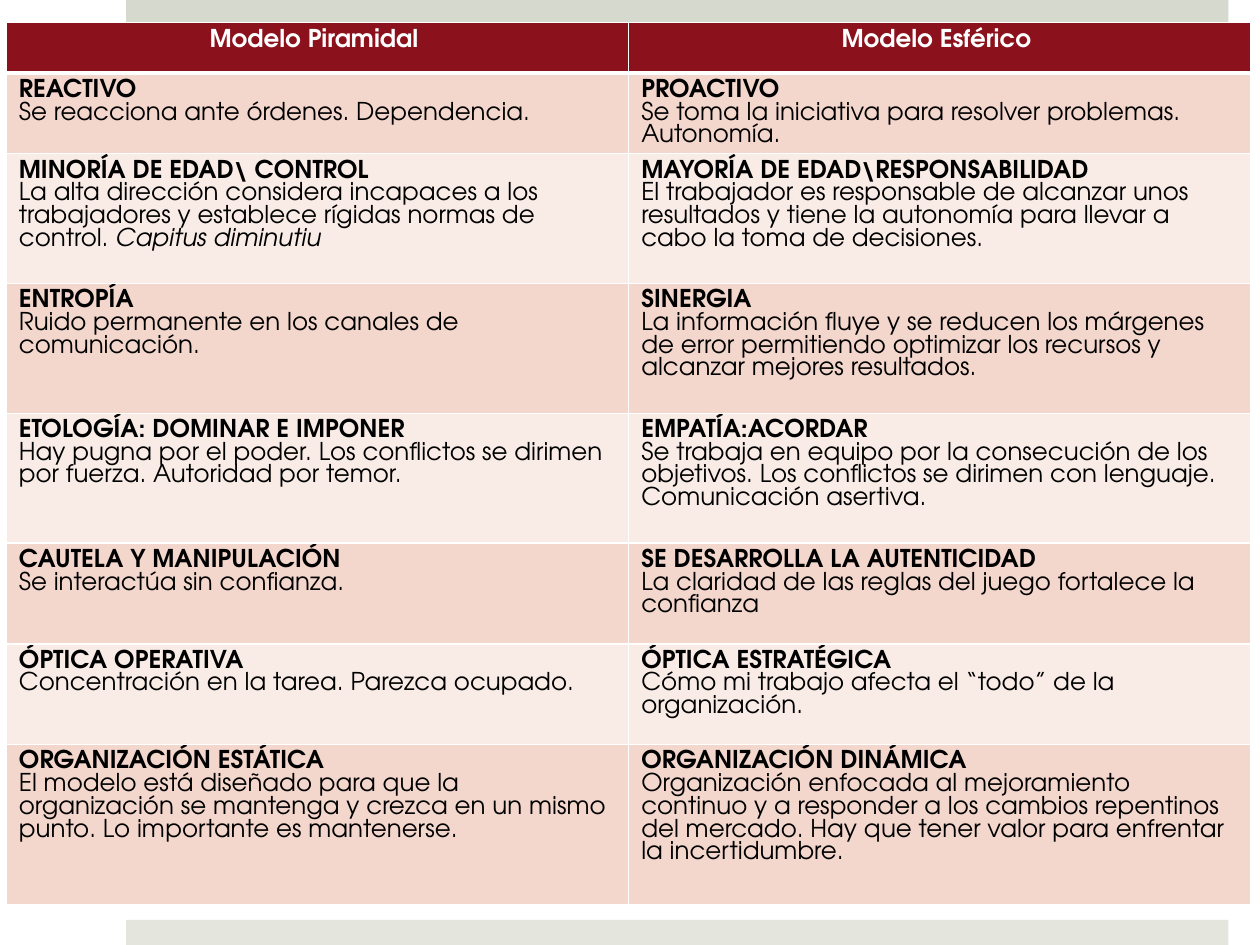
from pptx import Presentation
from pptx.dml.color import RGBColor
from pptx.enum.shapes import MSO_SHAPE
from pptx.enum.text import PP_ALIGN
from pptx.util import Inches, Pt
from lxml.etree import fromstring

FONT = "TeX Gyre Adventor"
NS = "http://schemas.openxmlformats.org/drawingml/2006/main"


def paint(fill, color):
    fill.solid()
    fill.fore_color.rgb = RGBColor.from_string(color)


def edge(cell, side, width):
    line = fromstring(
        f'<a:{side} xmlns:a="{NS}" w="{Pt(width)}"><a:solidFill>'
        f'<a:srgbClr val="FFFFFF"/></a:solidFill></a:{side}>')
    props = cell._tc.get_or_add_tcPr()
    props.insert(["lnL", "lnR", "lnT", "lnB"].index(side), line)


heads = ["Modelo Piramidal ", "Modelo Esférico "]
rows = [
    (0.63,
     ("REACTIVO", "Se reacciona ante órdenes. Dependencia."),
     ("PROACTIVO", "Se toma la iniciativa para resolver problemas. Autonomía.")),
    (1.03,
     ("MINORÍA DE EDAD\\ CONTROL",
      "La alta dirección considera incapaces a los trabajadores y establece "
      "rígidas normas de control. ", "Capitus diminutiu"),
     ("MAYORÍA DE EDAD\\RESPONSABILIDAD",
      "El trabajador es responsable de alcanzar unos resultados y tiene la "
      "autonomía para llevar a cabo la toma de decisiones.")),
    (1.03,
     ("ENTROPÍA", "Ruido permanente en los canales de comunicación."),
     ("SINERGIA",
      "La información fluye y se reducen los márgenes de error permitiendo "
      "optimizar los recursos y alcanzar mejores resultados.")),
    (1.03,
     ("ETOLOGÍA: DOMINAR E IMPONER",
      "Hay pugna por el poder. Los conflictos se dirimen por fuerza. "
      "Autoridad por temor."),
     ("EMPATÍA:ACORDAR",
      "Se trabaja en equipo por la consecución de los objetivos. Los "
      "conflictos se dirimen con lenguaje. Comunicación asertiva.")),
    (0.8,
     ("CAUTELA Y MANIPULACIÓN", "Se interactúa sin confianza."),
     ("SE DESARROLLA LA AUTENTICIDAD",
      "La claridad de las reglas del juego fortalece la confianza")),
    (0.8,
     ("ÓPTICA OPERATIVA", "Concentración en la tarea. Parezca ocupado."),
     ("ÓPTICA ESTRATÉGICA",
      "Cómo mi trabajo afecta el “todo” de la organización.")),
    (1.27,
     ("ORGANIZACIÓN ESTÁTICA",
      "El modelo está diseñado para que la organización se mantenga y crezca "
      "en un mismo punto. Lo importante es mantenerse."),
     ("ORGANIZACIÓN DINÁMICA",
      "Organización enfocada al mejoramiento continuo y a responder a los "
      "cambios repentinos del mercado. Hay que tener valor para enfrentar la "
      "incertidumbre.")),
]

deck = Presentation()
deck.slide_width, deck.slide_height = Inches(10), Inches(7.5)
slide = deck.slides.add_slide(deck.slide_layouts[6])

for top, color in [(0, "D6D9CD"), (7.3, "E4E6DE")]:
    bar = slide.shapes.add_shape(
        MSO_SHAPE.RECTANGLE, Inches(1), Inches(top), Inches(8.75), Inches(0.2))
    bar.shadow.inherit = False
    paint(bar.fill, color)
    bar.line.fill.background()

sizes = [0.4] + [row[0] for row in rows]
table = slide.shapes.add_table(
    len(sizes), 2, Inches(0.05), Inches(0.18),
    Inches(9.87), Inches(sum(sizes))).table
for col in table.columns:
    col.width = Inches(4.94)
for row, size in zip(table.rows, sizes):
    row.height = Inches(size)

for c, head in enumerate(heads):
    cell = table.cell(0, c)
    cell.text_frame.text = head
    cell.text_frame.paragraphs[0].alignment = PP_ALIGN.CENTER
    for r, row in enumerate(rows, 1):
        title, body, *extra = row[c + 1]
        frame = table.cell(r, c).text_frame
        frame.text = title
        para = frame.add_paragraph()
        para.text = body
        for term in extra:
            run = para.add_run()
            run.text = term
            run.font.italic = True

for r in range(len(sizes)):
    for c in range(2):
        cell = table.cell(r, c)
        paint(cell.fill, "8B121C" if r == 0 else ["F9ECE7", "F3D6CC"][r % 2])
        for side in ["lnL", "lnR", "lnT", "lnB"]:
            thick = (r, side) in [(0, "lnB"), (1, "lnT")]
            edge(cell, side, 3 if thick else 1)
        for n, para in enumerate(cell.text_frame.paragraphs):
            for run in para.runs:
                font = run.font
                font.name, font.size, font.bold = FONT, Pt(14), n == 0
                font.color.rgb = RGBColor.from_string("000000" if r else "FFFFFF")

deck.save("out.pptx")
